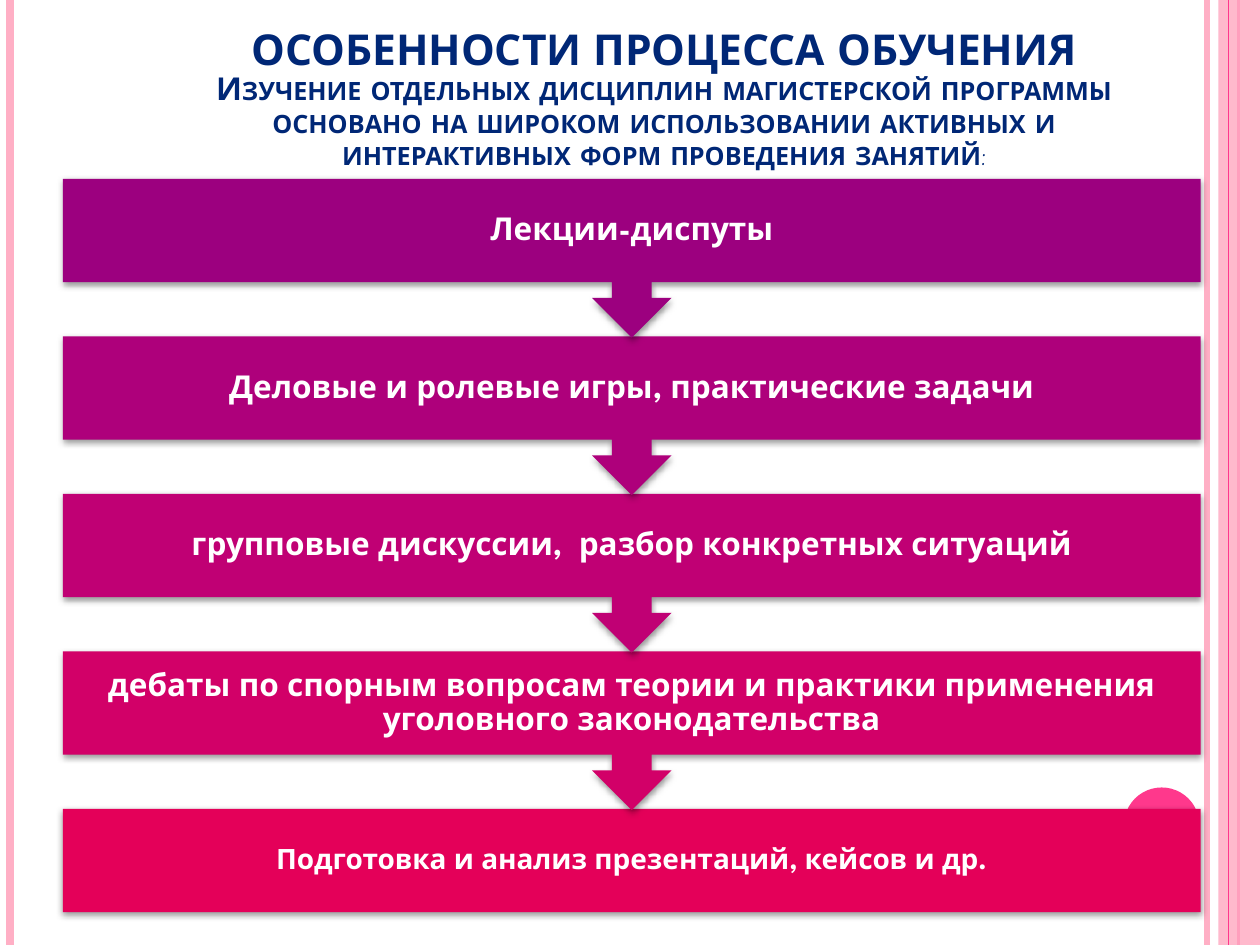
from lxml import etree
from pptx import Presentation
from pptx.dml.color import RGBColor
from pptx.enum.shapes import MSO_CONNECTOR, MSO_SHAPE
from pptx.enum.text import MSO_ANCHOR, MSO_AUTO_SIZE, PP_ALIGN
from pptx.oxml import parse_xml
from pptx.oxml.ns import nsdecls, qn
from pptx.util import Inches, Pt

STRAIGHT = MSO_CONNECTOR.STRAIGHT
RECTANGLE, OVAL = MSO_SHAPE.RECTANGLE, MSO_SHAPE.OVAL
DOWN_CALLOUT = MSO_SHAPE.DOWN_ARROW_CALLOUT
MIDDLE, BOTTOM = MSO_ANCHOR.MIDDLE, MSO_ANCHOR.BOTTOM
NO_AUTOFIT = MSO_AUTO_SIZE.NONE
CENTER = PP_ALIGN.CENTER

PALE_PINK = RGBColor(0xFF, 0xAF, 0xC5)
HOT_PINK = RGBColor(0xFF, 0x38, 0x8C)
NAVY = RGBColor(0x00, 0x27, 0x76)
WHITE = RGBColor(0xFF, 0xFF, 0xFF)
PURPLE = RGBColor(0x9C, 0x00, 0x7F)
PLUM = RGBColor(0xAE, 0x00, 0x7B)
MAGENTA = RGBColor(0xC0, 0x00, 0x74)
CERISE = RGBColor(0xD2, 0x00, 0x68)
CRIMSON = RGBColor(0xE4, 0x00, 0x59)

TITLE_FONT = "Comic Neue"
STEP_FONT = "League Spartan"

SHADOW = f"""<a:effectLst {nsdecls('a')}>
  <a:outerShdw blurRad="{Pt(4)}" dist="{Pt(1.6)}" dir="5400000" rotWithShape="0">
    <a:srgbClr val="000000"><a:alpha val="42000"/></a:srgbClr>
  </a:outerShdw>
</a:effectLst>"""


def add_block(kind, left, top, width, height, color):
    block = slide.shapes.add_shape(
        kind, Inches(left), Inches(top), Inches(width), Inches(height))
    block.shadow.inherit = False
    block.fill.solid()
    block.fill.fore_color.rgb = color
    block.line.fill.background()
    return block


def add_rule(x, color, weight):
    rule = slide.shapes.add_connector(
        STRAIGHT, Inches(x), Inches(0), Inches(x), Inches(7.5))
    rule.line.color.rgb = color
    rule.line.width = Pt(weight)
    etree.SubElement(rule._element.spPr, qn("a:effectLst"))


prs = Presentation()
prs.slide_width = Inches(10)
prs.slide_height = Inches(7.5)
slide = prs.slides.add_slide(prs.slide_layouts[5])

for x, color, weight in [(9.58, PALE_PINK, 3), (0.08, PALE_PINK, 4.5),
                         (9.83, HOT_PINK, 1.5)]:
    add_rule(x, color, weight)
side_band = add_block(RECTANGLE, 9.67, 0, 0.33, 7.5, PALE_PINK)
band_color = side_band._element.spPr.find(f"{qn('a:solidFill')}/{qn('a:srgbClr')}")
etree.SubElement(band_color, qn("a:alpha"), val="87000")
add_rule(9.75, HOT_PINK, 0.75)
add_block(OVAL, 8.92, 6.25, 0.6, 0.6, HOT_PINK)

title = slide.shapes.title
title.left, title.top = Inches(1.17), Inches(0.92)
title.width, title.height = Inches(8.2), Inches(0.5)
title.text_frame.auto_size = NO_AUTOFIT
title.text_frame.vertical_anchor = BOTTOM
heading = title.text_frame.paragraphs[0]
heading.alignment = CENTER
heading.line_spacing = 0.87
title_parts = [
    ("ОСОБЕННОСТИ ПРОЦЕССА ОБУЧЕНИЯ", 24.3, True),
    ("Изучение отдельных дисциплин магистерской программы основано на "
     "широком использовании активных и интерактивных форм проведения занятий",
     18, True),
    (":", 18, False),
]
for index, (words, size, bold) in enumerate(title_parts):
    if index == 1:
        heading.add_line_break()
    run = heading.add_run()
    run.text = words
    run.font.name = TITLE_FONT
    run.font.size = Pt(size)
    run.font.bold = bold
    run.font.color.rgb = NAVY
    run.font._element.set("cap", "small")

FIRST_TOP, STEP_PITCH = 1.42, 1.25
BOX_HEIGHT, CALLOUT_HEIGHT = 0.82, 1.26
steps = [
    ("Лекции-диспуты", PURPLE, 18),
    ("Деловые и ролевые игры, практические задачи", PLUM, 18),
    ("групповые дискуссии,  разбор конкретных ситуаций", MAGENTA, 18),
    ("дебаты по спорным вопросам теории и практики применения "
     "уголовного законодательства", CERISE, 18),
    ("Подготовка и анализ презентаций, кейсов и др.", CRIMSON, 16),
]
last = len(steps) - 1
for index, (words, color, size) in reversed(list(enumerate(steps))):
    kind, height = ((RECTANGLE, BOX_HEIGHT) if index == last
                    else (DOWN_CALLOUT, CALLOUT_HEIGHT))
    step = add_block(kind, 0.5, FIRST_TOP + index * STEP_PITCH, 9.03, height, color)
    properties = step._element.spPr
    properties.replace(properties.find(qn("a:effectLst")), parse_xml(SHADOW))
    frame = step.text_frame
    frame.word_wrap = True
    frame.vertical_anchor = MIDDLE
    frame.margin_left = frame.margin_right = Inches(0.14)
    frame.margin_top = frame.margin_bottom = Inches(0.14)
    line = frame.paragraphs[0]
    line.alignment = CENTER
    line.line_spacing = 0.9
    run = line.add_run()
    run.text = words
    run.font.name = STEP_FONT
    run.font.size = Pt(size)
    run.font.bold = True
    run.font.color.rgb = WHITE

prs.save("out.pptx")
